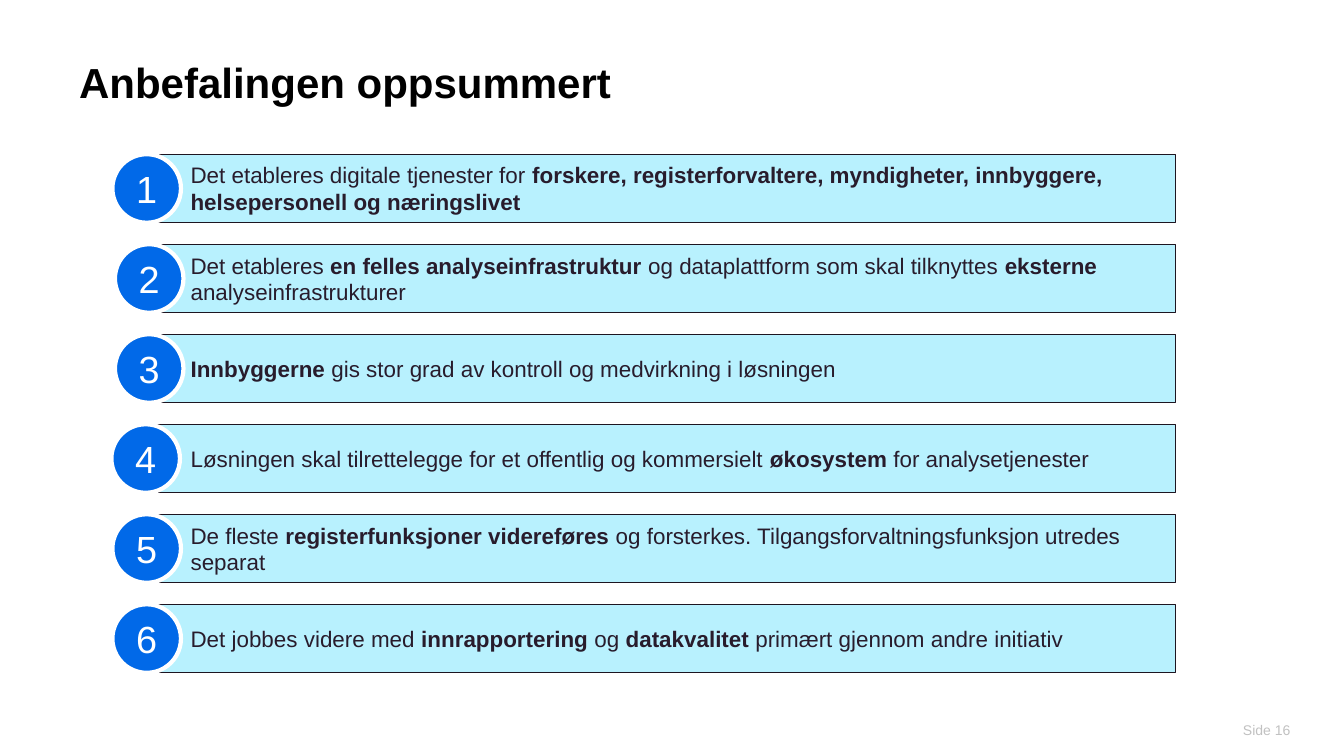
from pptx import Presentation
from pptx import util as u
from pptx.dml.color import RGBColor
from pptx.enum import shapes, text

BLACK = RGBColor(0x00, 0x00, 0x00)
WHITE = RGBColor(0xFF, 0xFF, 0xFF)
GREY = RGBColor(0xC1, 0xC1, 0xC1)
BLUE = RGBColor(0x01, 0x69, 0xE8)
CYAN = RGBColor(0xB8, 0xF1, 0xFE)
EDGE = RGBColor(0x1E, 0x15, 0x21)
INK = RGBColor(0x28, 0x1C, 0x2C)

LEFT, MID, RIGHT = text.PP_ALIGN.LEFT, text.PP_ALIGN.CENTER, text.PP_ALIGN.RIGHT


def write(shape, words, size, color, align, pads):
    """Fill a shape with text; parts between asterisks are bold."""
    frame = shape.text_frame
    form = {"word_wrap": True, "auto_size": text.MSO_AUTO_SIZE.NONE,
            "vertical_anchor": text.MSO_ANCHOR.MIDDLE}
    sides = ("margin_left", "margin_top", "margin_right", "margin_bottom")
    form.update(zip(sides, map(u.Inches, pads)))
    for key, value in form.items():
        setattr(frame, key, value)
    para = frame.paragraphs[0]
    para.alignment = align
    for i, part in enumerate(words.split("*")):
        if part:
            run = para.add_run()
            run.text = part
            look = {"name": "Arial", "size": u.Pt(size), "bold": i % 2 == 1}
            for key, value in look.items():
                setattr(run.font, key, value)
            run.font.color.rgb = color
    return para


def draw(group, kind, box, fill, line, width):
    """Add a filled and outlined shape to a group."""
    shape = group.shapes.add_shape(kind, *map(u.Inches, box))
    shape.shadow.inherit = False
    shape.fill.solid()
    shape.fill.fore_color.rgb = fill
    shape.line.color.rgb = line
    shape.line.width = u.Pt(width)
    return shape


deck = Presentation()
deck.slide_width, deck.slide_height = u.Inches(26.66), u.Inches(15)
slide = deck.slides.add_slide(deck.slide_layouts[5])

# Title
title = slide.shapes.title
place = {"left": 1.57, "top": 0.77, "width": 23.59, "height": 1.83}
for key, value in place.items():
    setattr(title, key, u.Inches(value))
para = write(title, "*Anbefalingen oppsummert*", 60, BLACK, LEFT, (0, 0, 0, 0))
para.line_spacing = 0.9

# Numbered recommendations: circle left edge and wording
rows = [
    (2.23, "Det etableres digitale tjenester for *forskere, registerforvaltere, "
           "myndigheter, innbyggere, helsepersonell og næringslivet*"),
    (2.28, "Det etableres *en felles analyseinfrastruktur *og dataplattform "
           "som skal tilknyttes *eksterne *analyseinfrastrukturer"),
    (2.28, "*Innbyggerne* gis stor grad av kontroll og medvirkning i løsningen"),
    (2.21, "Løsningen skal tilrettelegge for et offentlig og kommersielt "
           "*økosystem* for analysetjenester"),
    (2.23, "De fleste *registerfunksjoner videreføres *og forsterkes. "
           "Tilgangsforvaltningsfunksjon utredes separat"),
    (2.23, "Det jobbes videre med *innrapportering* og *datakvalitet* "
           "primært gjennom andre initiativ"),
]
first, last, size = 3.06, 11.99, 1.36
step = (last - first) / (len(rows) - 1)
for i, (left, words) in enumerate(rows):
    top = first + i * step
    group = slide.shapes.add_group_shape()
    bar = draw(group, shapes.MSO_SHAPE.RECTANGLE, (2.89, top, 20.43, size),
               CYAN, EDGE, 1)
    write(bar, words, 32, INK, LEFT, (0.89, 0.05, 0.1, 0.05))
    disc = draw(group, shapes.MSO_SHAPE.OVAL, (left, top, size, size),
                BLUE, WHITE, 6)
    write(disc, str(i + 1), 54, WHITE, MID, (0.1, 0.05, 0.1, 0.05))

# Page number
page = slide.shapes.add_textbox(*map(u.Inches, (24.03, 14.29, 1.57, 0.4)))
write(page, "Side 16", 20, GREY, RIGHT, (0, 0, 0, 0))

deck.save("out.pptx")
